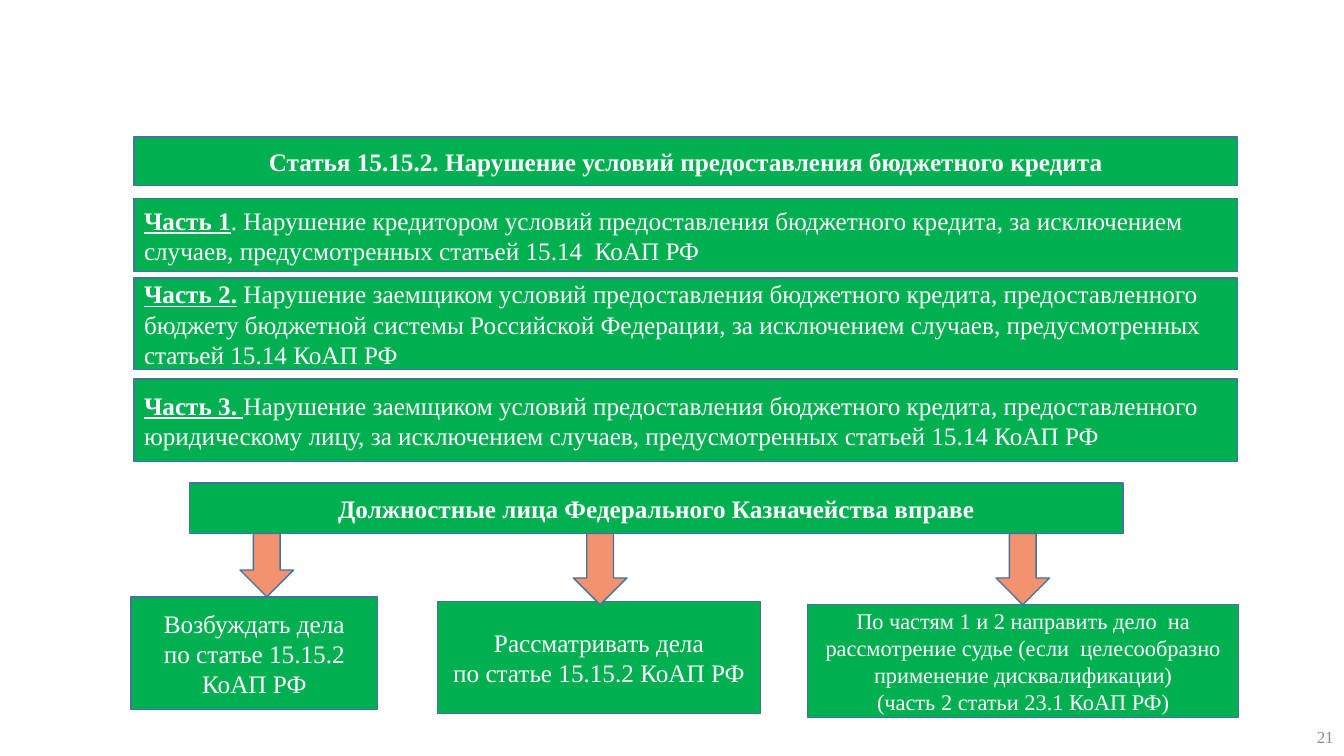
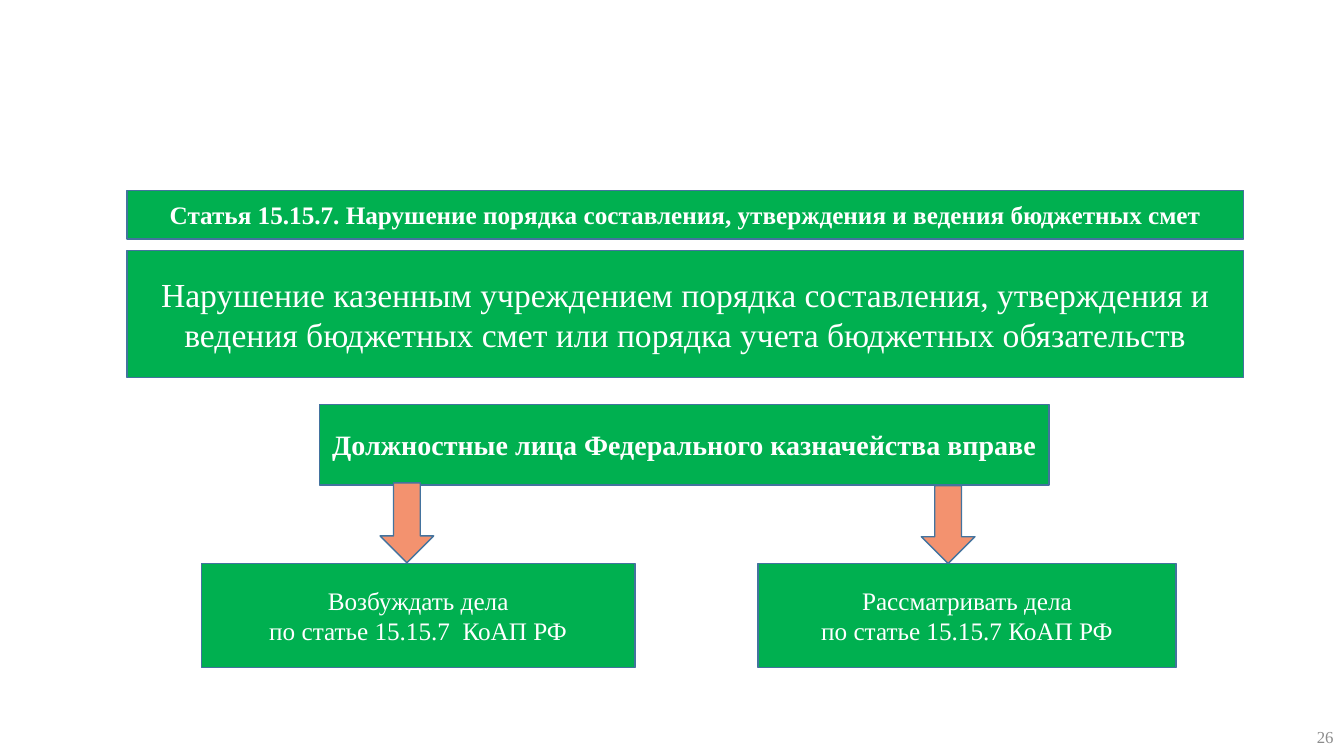
"""Build two slides on articles 15.15.2 and 15.15.7 as green block diagrams."""
from pptx import Presentation
from pptx.dml.color import RGBColor
from pptx.enum.shapes import MSO_SHAPE
from pptx.enum.text import MSO_ANCHOR, MSO_AUTO_SIZE, PP_ALIGN
from pptx.util import Cm, Pt

COLOURS = {"block": "00B050", "outline": "43739E", "arrow": "F3926F",
           "text": "FFFFFF", "number": "8C8C8C"}
FONT = "Times New Roman"
ARROW_WIDTH = 1.35
TITLE_HEIGHT = 1.22
NUMBER_PLACE = (26.24, 17.98, 7.62, 1.15)

PAGES = [
    {
        "number": "21",
        "title": "Статья 15.15.2. Нарушение условий предоставления бюджетного кредита",
        "title_place": (3.38, 3.45, 27.81, TITLE_HEIGHT),
        "parts": [
            (5, 1.85, 18, PP_ALIGN.LEFT, "Часть 1",
             ". Нарушение кредитором условий предоставления бюджетного кредита, "
             "за исключением случаев, предусмотренных статьей 15.14  КоАП РФ"),
            (7.01, 2.31, 18, PP_ALIGN.LEFT, "Часть 2.",
             " Нарушение заемщиком условий предоставления бюджетного кредита, "
             "предоставленного бюджету бюджетной системы Российской Федерации, "
             "за исключением случаев, предусмотренных статьей 15.14 КоАП РФ"),
            (9.55, 2.08, 18, PP_ALIGN.LEFT, "Часть 3. ",
             "Нарушение заемщиком условий предоставления бюджетного кредита, "
             "предоставленного юридическому лицу, за исключением случаев, "
             "предусмотренных статьей 15.14 КоАП РФ"),
        ],
        "officers": "Должностные лица Федерального Казначейства вправе",
        "officers_place": (4.78, 12.17, 23.52, 1.27),
        "officers_size": 18,
        "rights": [
            ((3.3, 15.04, 6.22, 2.84), 18,
             ["Возбуждать дела", "по статье 15.15.2", "КоАП РФ"]),
            ((11.02, 15.16, 8.15, 2.82), 18,
             ["Рассматривать дела", "по статье 15.15.2 КоАП РФ"]),
            ((20.35, 15.24, 10.87, 2.84), 16,
             ["По частям 1 и 2 направить дело  на рассмотрение судье "
              "(если  целесообразно применение дисквалификации)",
              "(часть 2 статьи 23.1 КоАП РФ)"]),
        ],
        "arrows": [(6.05, 13.44, 1.6), (14.45, 13.44, 1.8), (25.1, 13.44, 1.8)],
    },
    {
        "number": "26",
        "title": "Статья 15.15.7. Нарушение порядка составления, утверждения "
                 "и ведения бюджетных смет",
        "title_place": (3.2, 4.8, 28.14, TITLE_HEIGHT),
        "parts": [
            (6.32, 3.2, 24, PP_ALIGN.CENTER, "",
             "Нарушение казенным учреждением порядка составления, утверждения и "
             "ведения бюджетных смет или порядка учета бюджетных обязательств"),
        ],
        "officers": "Должностные лица Федерального казначейства вправе",
        "officers_place": (8.05, 10.19, 18.39, 2.03),
        "officers_size": 20,
        "rights": [
            ((5.08, 14.2, 10.92, 2.62), 18,
             ["Возбуждать дела", "по статье 15.15.7  КоАП РФ"]),
            ((19.1, 14.2, 10.54, 2.62), 18,
             ["Рассматривать дела", "по статье 15.15.7 КоАП РФ"]),
        ],
        "arrows": [(9.58, 12.17, 2.01), (23.22, 12.24, 1.96)],
    },
]


def paint(shape, fill):
    """Give a shape its fill and the common outline."""
    shape.fill.solid()
    shape.fill.fore_color.rgb = RGBColor.from_string(COLOURS[fill])
    shape.line.color.rgb = RGBColor.from_string(COLOURS["outline"])
    shape.line.width = Pt(1)
    shape.shadow.inherit = False


def write(shape, paragraphs, size, align=PP_ALIGN.CENTER, colour="text"):
    """Write paragraphs, each a list of (text, format values) runs."""
    frame = shape.text_frame
    frame.word_wrap = True
    frame.auto_size = MSO_AUTO_SIZE.NONE
    frame.vertical_anchor = MSO_ANCHOR.MIDDLE
    for index, runs in enumerate(paragraphs):
        para = frame.add_paragraph() if index else frame.paragraphs[0]
        para.alignment = align
        for text, values in runs:
            span = para.add_run()
            span.text = text
            span.font.color.rgb = RGBColor.from_string(COLOURS[colour])
            formats = {"name": FONT, "size": Pt(size), "bold": False, **values}
            for name, value in formats.items():
                setattr(span.font, name, value)


deck = Presentation()
deck.slide_width, deck.slide_height = Cm(33.87), Cm(19.05)
title_only = deck.slide_layouts[5]

for content in PAGES:
    page = deck.slides.add_slide(title_only)

    title = page.shapes.title
    sides = ("left", "top", "width", "height")
    for side, length in zip(sides, content["title_place"]):
        setattr(title, side, Cm(length))
    paint(title, "block")
    write(title, [[(content["title"], {"bold": True})]], 18)

    number = page.shapes.add_textbox(*map(Cm, NUMBER_PLACE))
    write(number, [[(content["number"], {})]], 12, PP_ALIGN.RIGHT, "number")

    left, _, width, _ = content["title_place"]
    blocks = []
    for top, height, size, align, lead, text in content["parts"]:
        runs = [(lead, {"bold": True, "underline": True})] if lead else []
        blocks.append(((left, top, width, height), [runs + [(text, {})]], size, align))
    blocks.append((content["officers_place"], [[(content["officers"], {"bold": True})]],
                   content["officers_size"], PP_ALIGN.CENTER))
    for place, size, lines in content["rights"]:
        blocks.append((place, [[(line, {})] for line in lines], size, PP_ALIGN.CENTER))

    for place, paragraphs, size, align in blocks:
        box = page.shapes.add_shape(MSO_SHAPE.RECTANGLE, *map(Cm, place))
        paint(box, "block")
        write(box, paragraphs, size, align)

    for left, top, height in content["arrows"]:
        arrow = page.shapes.add_shape(
            MSO_SHAPE.DOWN_ARROW, Cm(left), Cm(top), Cm(ARROW_WIDTH), Cm(height))
        paint(arrow, "arrow")

deck.save("out.pptx")
